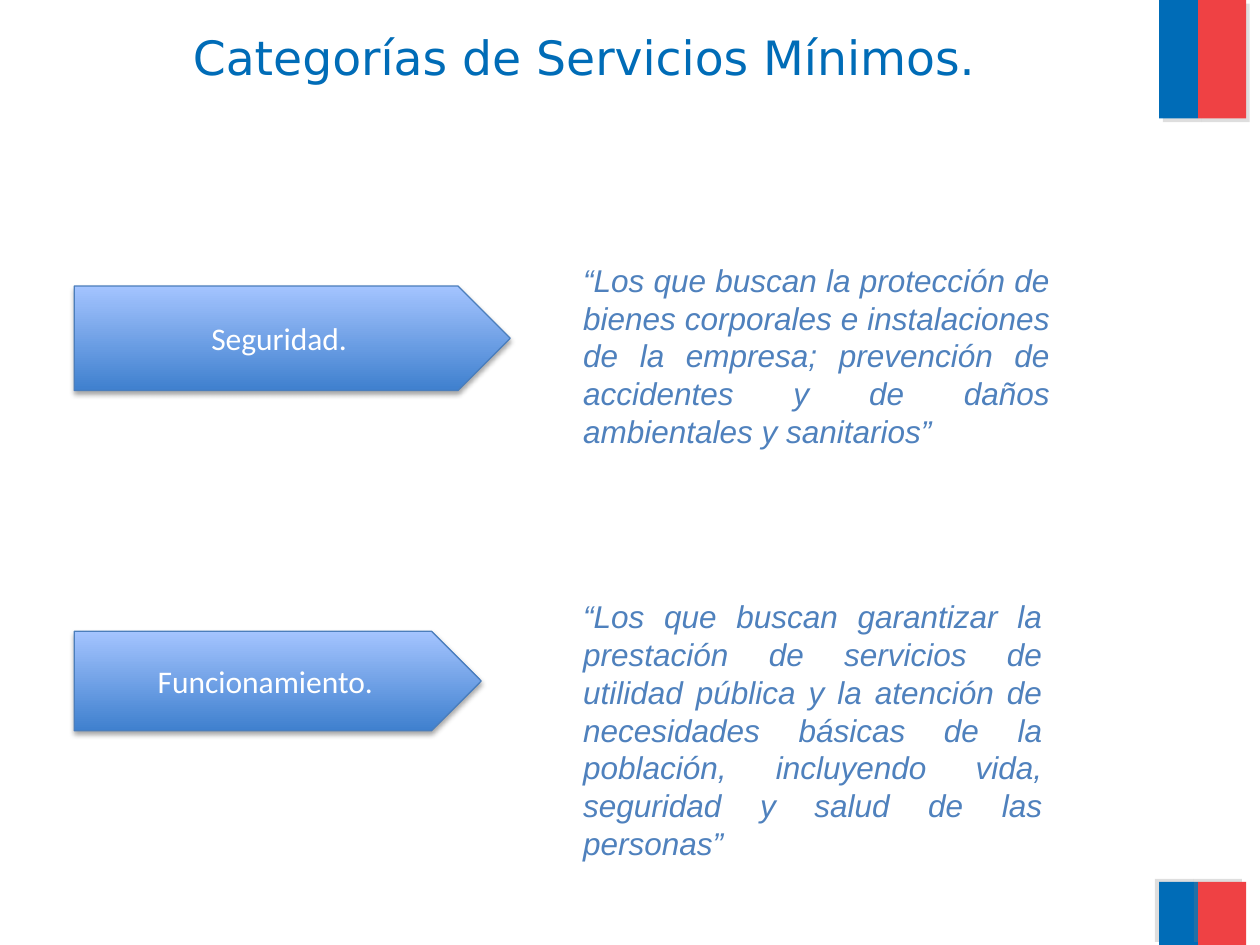
from dataclasses import dataclass

import lxml.etree
import pptx
import pptx.dml.color
import pptx.enum.shapes
import pptx.enum.text
import pptx.oxml.ns
import pptx.util

Inches = pptx.util.Inches
Pt = pptx.util.Pt
Kind = pptx.enum.shapes.MSO_SHAPE
Align = pptx.enum.text.PP_ALIGN
Anchor = pptx.enum.text.MSO_ANCHOR
BLUE = "006CB7"
RED = "EF4144"


@dataclass
class Box:
    left: float
    top: float
    width: float
    height: float

    def place(self) -> list:
        return [Inches(n) for n in (self.left, self.top, self.width, self.height)]


@dataclass
class Shade:
    color: str
    alpha: int
    blur: float
    dist: float
    angle: int


@dataclass
class Band:
    box: Box
    color: str
    angle: int


@dataclass
class Group:
    label: str
    arrow: Box
    quote: str
    area: Box


BANDS = [
    Band(Box(9.2, -0.01, 0.31, 0.95), BLUE, 45),
    Band(Box(9.51, 0, 0.38, 0.94), RED, 45),
    Band(Box(9.2, 7, 0.31, 0.5), BLUE, 215),
    Band(Box(9.51, 7, 0.38, 0.5), RED, 215),
]
GROUPS = [
    Group(
        "Seguridad.",
        Box(0.59, 2.27, 3.46, 0.83),
        "“Los que buscan la protección de bienes corporales e instalaciones "
        "de la empresa; prevención de accidentes y de daños ambientales y sanitarios”",
        Box(4.53, 2.02, 3.9, 1.62),
    ),
    Group(
        "Funcionamiento.",
        Box(0.59, 5.01, 3.23, 0.79),
        "“Los que buscan garantizar la prestación de servicios de utilidad pública "
        "y la atención de necesidades básicas de la población, incluyendo vida, "
        "seguridad y salud de las personas”",
        Box(4.53, 4.69, 3.84, 2.22),
    ),
]


def rgb(code: str) -> pptx.dml.color.RGBColor:
    return pptx.dml.color.RGBColor.from_string(code)


def cast(shape, shade: Shade) -> None:
    shape.shadow.inherit = False
    qn = pptx.oxml.ns.qn
    list_node = shape.element.spPr.find(qn("a:effectLst"))
    outer = lxml.etree.SubElement(
        list_node,
        qn("a:outerShdw"),
        blurRad=str(int(Pt(shade.blur))),
        dist=str(int(Pt(shade.dist))),
        dir=str(shade.angle * 60000),
        algn="ctr",
        rotWithShape="0",
    )
    color = lxml.etree.SubElement(outer, qn("a:srgbClr"), val=shade.color)
    lxml.etree.SubElement(color, qn("a:alpha"), val=str(shade.alpha * 1000))


def write(frame, text: str, size: float, face: str, color: str, align) -> None:
    frame.word_wrap = True
    para = frame.paragraphs[0]
    para.text = text
    para.alignment = align
    para.font.size = Pt(size)
    para.font.name = face
    para.font.color.rgb = rgb(color)


def draw_band(slide, band: Band) -> None:
    shape = slide.shapes.add_shape(Kind.RECTANGLE, *band.box.place())
    shape.fill.solid()
    shape.fill.fore_color.rgb = rgb(band.color)
    shape.line.fill.background()
    cast(shape, Shade("808080", 25, 0, 3, band.angle))


def draw_arrow(slide, group: Group) -> None:
    shape = slide.shapes.add_shape(Kind.PENTAGON, *group.arrow.place())
    shape.fill.gradient()
    shape.fill.gradient_angle = 90
    for stop, place, color in zip(shape.fill.gradient_stops, (0, 1), ("3F80CE", "A4C4FF")):
        stop.position = place
        stop.color.rgb = rgb(color)
    shape.line.color.rgb = rgb("4B7EBC")
    shape.line.width = Pt(0.75)
    cast(shape, Shade("000000", 35, 3.1, 1.8, 90))
    shape.text_frame.vertical_anchor = Anchor.MIDDLE
    write(shape.text_frame, group.label, 18, "Calibri", "FFFFFF", Align.CENTER)


def draw_quote(slide, group: Group) -> None:
    frame = slide.shapes.add_textbox(*group.area.place()).text_frame
    write(frame, group.quote, 18, "Arial", "4F81BD", Align.JUSTIFY)
    frame.paragraphs[0].font.italic = True
    frame.auto_size = pptx.enum.text.MSO_AUTO_SIZE.SHAPE_TO_FIT_TEXT


def main() -> None:
    deck = pptx.Presentation()
    deck.slide_width = Inches(10)
    deck.slide_height = Inches(7.5)
    slide = deck.slides.add_slide(deck.slide_layouts[5])

    title = slide.shapes.title
    title.left, title.top, title.width, title.height = Box(0.17, 0.17, 8.93, 1.25).place()
    title.text_frame.vertical_anchor = Anchor.TOP
    write(title.text_frame, "Categorías de Servicios Mínimos.", 27, "DejaVu Sans", BLUE, Align.CENTER)

    for band in BANDS:
        draw_band(slide, band)
    for group in GROUPS:
        draw_arrow(slide, group)
        draw_quote(slide, group)
    deck.save("out.pptx")


if __name__ == "__main__":
    main()
